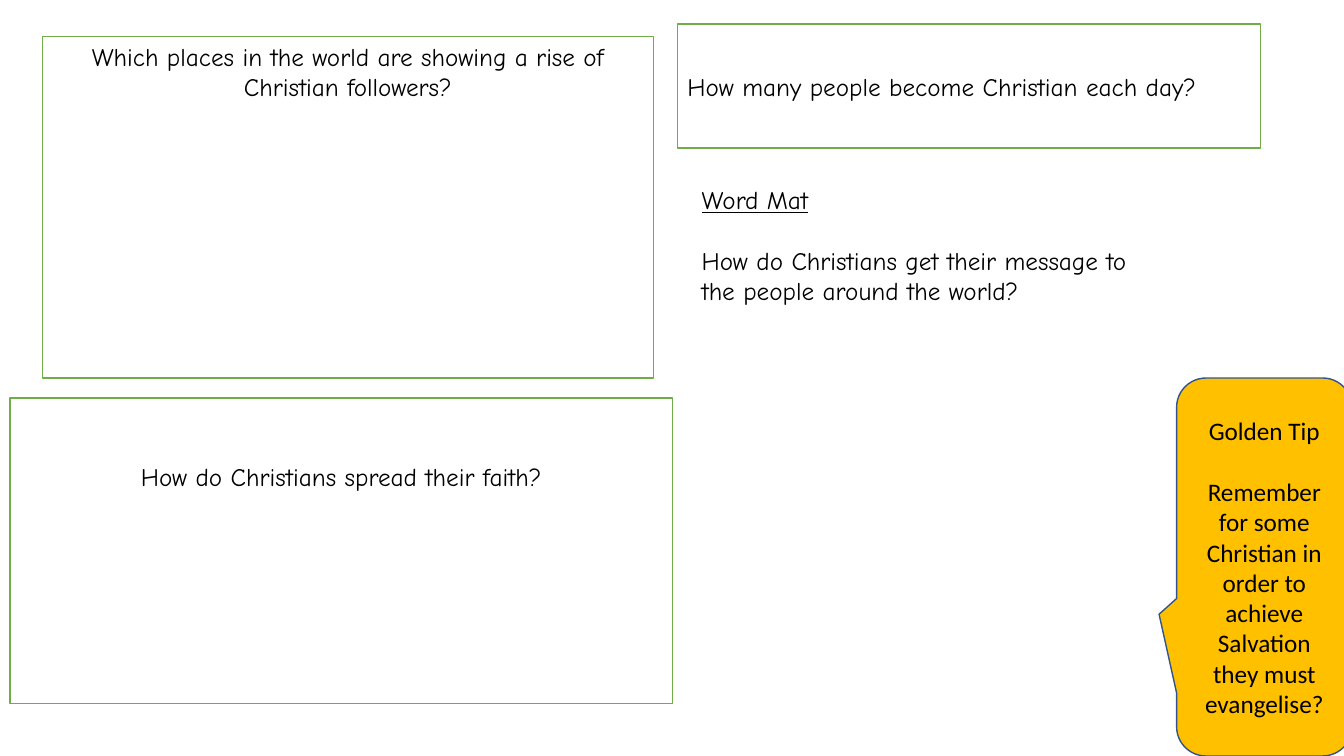
import pptx
import pptx.util
import pptx.dml.color
import pptx.enum.shapes
import pptx.enum.text

Inches = pptx.util.Inches
Pt = pptx.util.Pt
SHAPE = pptx.enum.shapes.MSO_SHAPE
ANCHOR = pptx.enum.text.MSO_ANCHOR
ALIGN = pptx.enum.text.PP_ALIGN


def rgb(value):
    return pptx.dml.color.RGBColor.from_string(value)


class Worksheet:
    font = "Comic Neue"
    size = 18
    text_color = "000000"
    gap = 22

    def __init__(self, slide):
        self.s = slide

    def set_text(self, sp, lines, align, anchor, font=None, top=0.05):
        tf = sp.text_frame
        tf.word_wrap = True
        tf.vertical_anchor = anchor
        tf.margin_top = Inches(top)
        tf.text = "\n".join(lines)
        for i, p in enumerate(tf.paragraphs):
            p.alignment = align
            if i:
                p.space_before = Pt(self.gap)
            for r in p.runs:
                r.font.name = font or self.font
                r.font.size = Pt(self.size)
                r.font.color.rgb = rgb(self.text_color)
        return tf

    def shape(self, kind, at, fill, line):
        sp = self.s.shapes.add_shape(kind, *map(Inches, at))
        sp.shadow.inherit = False
        sp.fill.solid()
        sp.fill.fore_color.rgb = rgb(fill)
        sp.line.color.rgb = rgb(line)
        sp.line.width = Pt(1)
        return sp

    def question(self, at, text, align=ALIGN.CENTER, anchor=ANCHOR.TOP, top=0.05):
        sp = self.shape(SHAPE.RECTANGLE, at, "FFFFFF", "70AD47")
        self.set_text(sp, [text], align, anchor, top=top)

    def tip(self, at, lines):
        sp = self.shape(SHAPE.ROUNDED_RECTANGULAR_CALLOUT, at, "FFC000", "31538F")
        for i, value in enumerate((-0.6, 0.125, 0.167)):
            sp.adjustments[i] = value
        self.set_text(sp, lines, ALIGN.CENTER, ANCHOR.MIDDLE, "Calibri")

    def word_mat(self, at, lines):
        sp = self.s.shapes.add_textbox(*map(Inches, at))
        tf = self.set_text(sp, lines, ALIGN.LEFT, ANCHOR.TOP)
        tf.paragraphs[0].runs[0].font.underline = True


def main():
    prs = pptx.Presentation()
    prs.slide_width = Inches(13.33)
    prs.slide_height = Inches(7.5)
    sheet = Worksheet(prs.slides.add_slide(prs.slide_layouts[6]))

    sheet.question((0.42, 0.36, 6.06, 3.39),
                   "Which places in the world are showing a rise of Christian followers?")
    sheet.question((0.1, 3.95, 6.57, 3.03),
                   "How do Christians spread their faith?", top=0.63)
    sheet.question((6.72, 0.24, 5.78, 1.23),
                   "How many people become Christian each day?",
                   ALIGN.LEFT, ANCHOR.MIDDLE)
    sheet.tip((11.67, 3.75, 1.74, 3.75),
              ["Golden Tip",
               "Remember for some Christian in order to achieve Salvation they must evangelise?"])
    sheet.word_mat((6.86, 1.78, 4.55, 5.25),
                   ["Word Mat",
                    "How do Christians get their message to the people around the world?"])
    prs.save("out.pptx")


if __name__ == "__main__":
    main()
